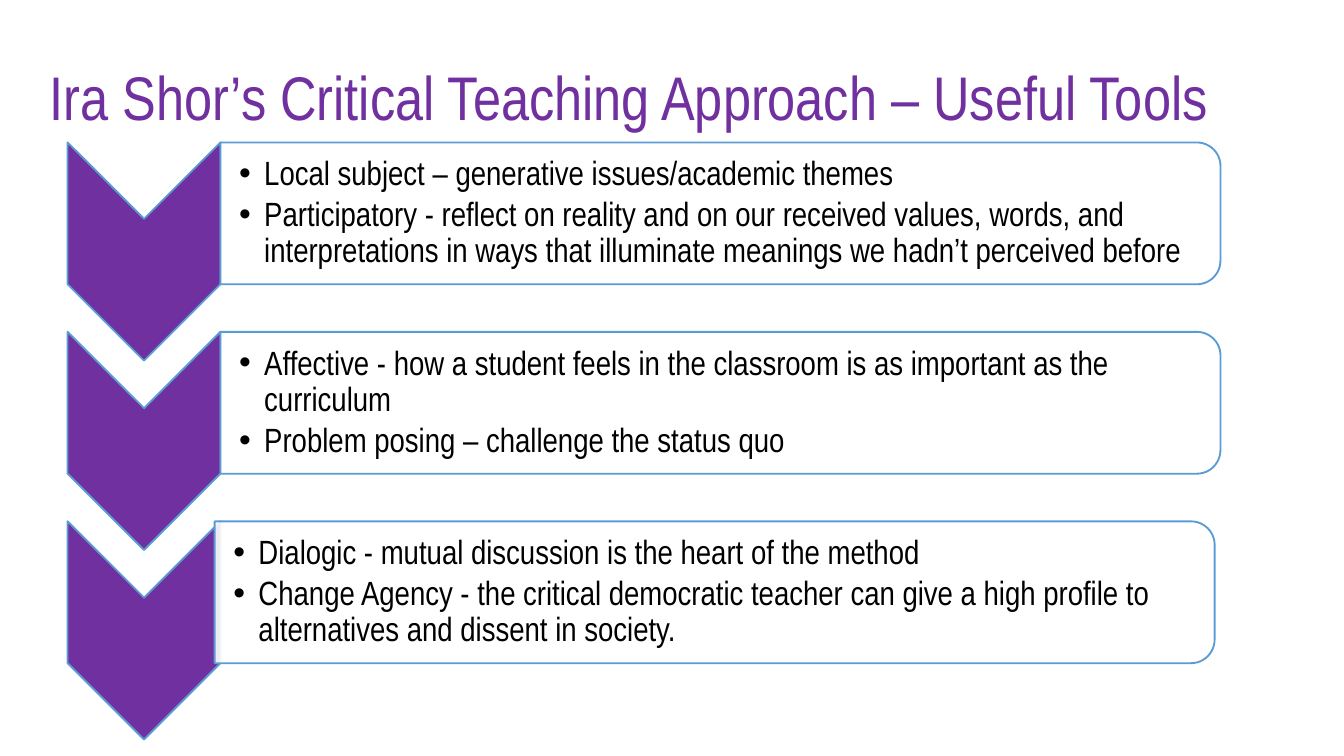
from dataclasses import dataclass

from lxml import etree
from pptx import Presentation
from pptx.dml.color import RGBColor
from pptx.enum import shapes, text
from pptx.oxml import ns
from pptx.util import Pt


@dataclass(frozen=True)
class Theme:
    font: str = "Arial Narrow"
    purple: RGBColor = RGBColor(0x70, 0x30, 0xA0)
    outline: RGBColor = RGBColor(0x5B, 0x9B, 0xD5)
    white: RGBColor = RGBColor(0xFF, 0xFF, 0xFF)
    black: RGBColor = RGBColor(0, 0, 0)
    title_size: float = 33
    body_size: float = 18


class SlideBuilder:
    def __init__(self, slide, theme):
        self.slide = slide
        self.theme = theme

    def turned_shape(self, kind, left, top, width, height, fill):
        """Add a shape turned a quarter clockwise that covers the given area."""
        x = left + (width - height) / 2
        y = top + (height - width) / 2
        sp = self.slide.shapes.add_shape(kind, Pt(x), Pt(y), Pt(height), Pt(width))
        sp.rotation = 90
        sp.shadow.inherit = False
        sp.fill.solid()
        sp.fill.fore_color.rgb = fill
        sp.line.color.rgb = self.theme.outline
        sp.line.width = Pt(1)
        return sp

    def chevron(self, left, top, width, height):
        self.turned_shape(shapes.MSO_SHAPE.CHEVRON, left, top, width, height,
                          self.theme.purple)

    def panel(self, left, top, width, height):
        sp = self.turned_shape(shapes.MSO_SHAPE.ROUND_2_SAME_RECTANGLE,
                               left, top, width, height, self.theme.white)
        color = sp.fill._xPr.find(ns.qn("a:solidFill"))[0]
        etree.SubElement(color, ns.qn("a:alpha"), val="90000")

    def text_frame(self, left, top, width, height):
        box = self.slide.shapes.add_textbox(Pt(left), Pt(top), Pt(width), Pt(height))
        tf = box.text_frame
        tf.word_wrap = True
        tf.vertical_anchor = text.MSO_ANCHOR.MIDDLE
        return tf

    def format_paragraph(self, p, size, color):
        p.line_spacing = 0.9
        for r in p.runs:
            r.font.name = self.theme.font
            r.font.size = Pt(size)
            r.font.color.rgb = color

    def title(self, words, left, top, width, height):
        tf = self.text_frame(left, top, width, height)
        tf.text = words
        self.format_paragraph(tf.paragraphs[0], self.theme.title_size,
                              self.theme.purple)

    def bullets(self, items, left, top, width, height):
        tf = self.text_frame(left, top, width, height)
        tf.margin_left = Pt(10)
        tf.margin_top = tf.margin_right = tf.margin_bottom = Pt(0.9)
        tf.text = "\n".join(items)
        for p in tf.paragraphs:
            p.space_after = Pt(2.5)
            self.format_paragraph(p, self.theme.body_size, self.theme.black)
            props = p._p.get_or_add_pPr()
            props.set("marL", str(Pt(13.5)))
            props.set("indent", str(Pt(-13.5)))
            etree.SubElement(props, ns.qn("a:buFont"), typeface="Arial")
            etree.SubElement(props, ns.qn("a:buChar"), char="•")


TOOLS = [
    ["Local subject – generative issues/academic themes",
     "Participatory - reflect on reality and on our received values, words, and "
     "interpretations in ways that illuminate meanings we hadn’t perceived before"],
    ["Affective - how a student feels in the classroom is as important as the "
     "curriculum",
     "Problem posing – challenge the status quo"],
    ["Dialogic - mutual discussion is the heart of the method",
     "Change Agency - the critical democratic teacher can give a high profile to "
     "alternatives and dissent in society."],
]
FIRST_TOP, ROW_PITCH = 76.3, 101.5
CHEVRON_LEFT, CHEVRON_WIDTH, CHEVRON_HEIGHT = 36.2, 81.9, 116.9
PANEL_LEFTS = [118.1, 118.1, 115]
PANEL_WIDTH, PANEL_HEIGHT = 535.7, 76
TEXT_WIDTH, TEXT_INSET = 532, 3.7


def main():
    prs = Presentation()
    prs.slide_width, prs.slide_height = Pt(720), Pt(405)
    s = SlideBuilder(prs.slides.add_slide(prs.slide_layouts[6]), Theme())

    s.title("Ira Shor’s Critical Teaching Approach – Useful Tools",
            19.5, 14.4, 651, 78.5)
    for row, (items, left) in enumerate(zip(TOOLS, PANEL_LEFTS)):
        top = FIRST_TOP + row * ROW_PITCH
        s.chevron(CHEVRON_LEFT, top, CHEVRON_WIDTH, CHEVRON_HEIGHT)
        s.panel(left, top, PANEL_WIDTH, PANEL_HEIGHT)
        s.bullets(items, left, top + TEXT_INSET, TEXT_WIDTH,
                  PANEL_HEIGHT - 2 * TEXT_INSET)

    prs.save("out.pptx")


if __name__ == "__main__":
    main()
